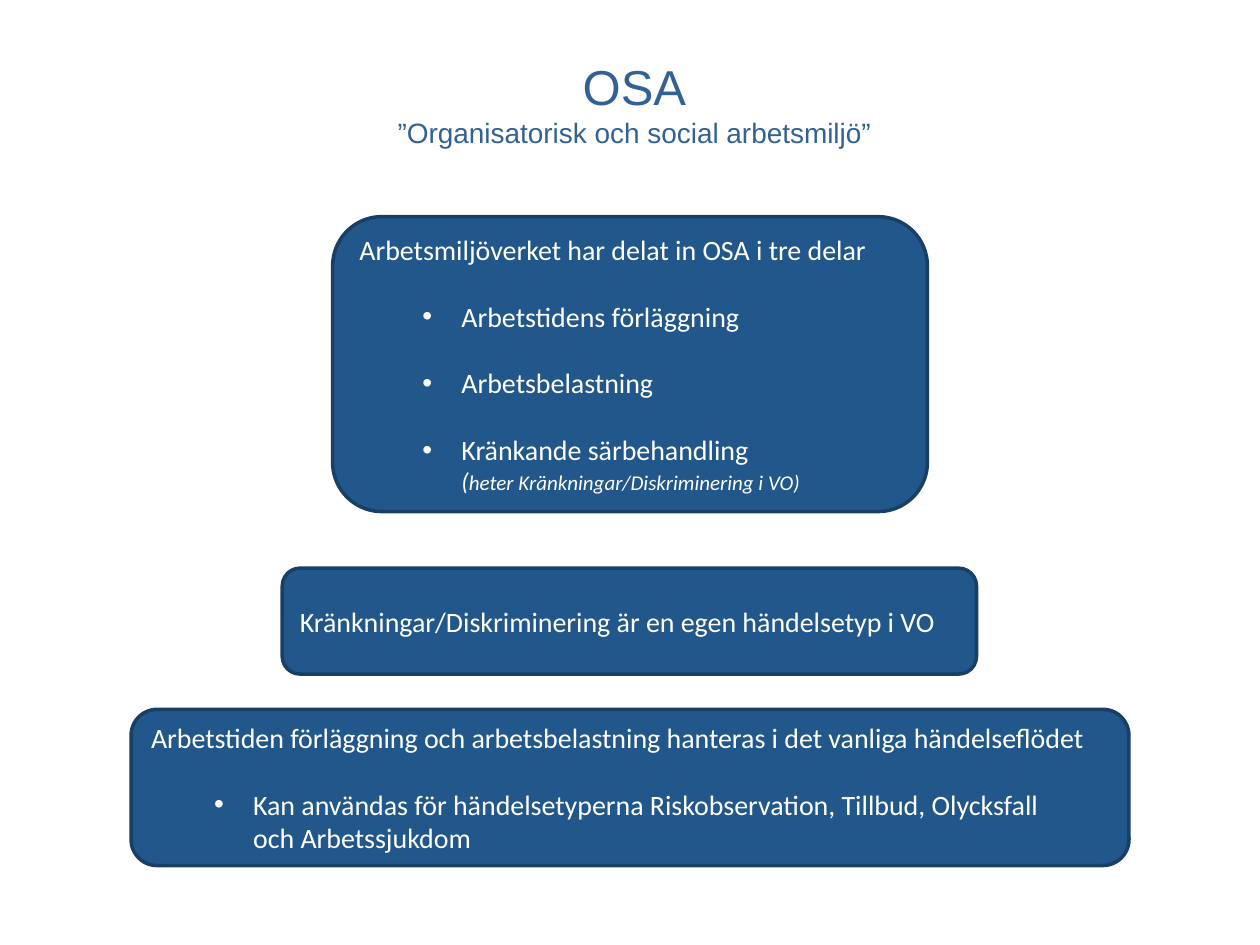
from lxml.etree import SubElement
from pptx import Presentation
from pptx.dml.color import RGBColor
from pptx.enum.shapes import MSO_SHAPE as SHAPE
from pptx.enum.text import MSO_ANCHOR as ANCHOR, PP_ALIGN as ALIGN
from pptx.oxml.ns import qn
from pptx.util import Inches, Pt

TITLE_BLUE = RGBColor(0x32, 0x62, 0x95)
FILL_BLUE = RGBColor(0x21, 0x57, 0x8A)
LINE_BLUE = RGBColor(0x18, 0x40, 0x66)
WHITE = RGBColor(0xFF, 0xFF, 0xFF)
GAP = 19


def add_run(p, text, size=16, font="Calibri", color=WHITE, italic=None):
    """Append a formatted run to a paragraph."""
    r = p.add_run()
    r.text = text
    r.font.size = Pt(size)
    r.font.name = font
    r.font.color.rgb = color
    r.font.italic = italic


def indent(p, left=0.81, bullet=False):
    """Indent a paragraph, with a hanging bullet if asked for."""
    p.level = 1
    pPr = p._p.get_or_add_pPr()
    pPr.set("marL", str(Inches(left)))
    pPr.set("indent", str(Inches(-0.31) if bullet else 0))
    if bullet:
        SubElement(pPr, qn("a:buFont"), typeface="Arial")
        SubElement(pPr, qn("a:buChar"), char="•")


def add_title(slide, box, heading, subheading):
    """Place the two-line title in its placeholder."""
    sp = slide.shapes.title
    sp.left, sp.top, sp.width, sp.height = map(Inches, box)
    tf = sp.text_frame
    tf.vertical_anchor = ANCHOR.MIDDLE
    p = tf.paragraphs[0]
    p.alignment = ALIGN.CENTER
    add_run(p, heading, size=28, font="Arial", color=TITLE_BLUE)
    p.add_line_break()
    add_run(p, subheading, size=16, font="Arial", color=TITLE_BLUE)


def add_panel(slide, box, lead, bullets=()):
    """Draw a rounded panel with a lead line and bullets, and return its text frame."""
    sp = slide.shapes.add_shape(SHAPE.ROUNDED_RECTANGLE, *map(Inches, box))
    sp.shadow.inherit = False
    sp.fill.solid()
    sp.fill.fore_color.rgb = FILL_BLUE
    sp.line.color.rgb = LINE_BLUE
    sp.line.width = Pt(2)
    tf = sp.text_frame
    tf.word_wrap = True
    tf.vertical_anchor = ANCHOR.MIDDLE
    tf.paragraphs[0].alignment = ALIGN.LEFT
    add_run(tf.paragraphs[0], lead)
    for lines in bullets:
        p = tf.add_paragraph()
        p.alignment = ALIGN.LEFT
        p.space_before = Pt(GAP)
        indent(p, bullet=True)
        for i, line in enumerate(lines.split("\n")):
            if i:
                p.add_line_break()
            add_run(p, line)
    return tf


def add_note(tf, text):
    """Add a small italic remark in parentheses under the last bullet."""
    p = tf.add_paragraph()
    p.alignment = ALIGN.LEFT
    indent(p)
    add_run(p, "(", size=14, italic=True)
    add_run(p, text + ")", size=12, italic=True)


def main():
    """Build the slide and save it."""
    prs = Presentation()
    prs.slide_width, prs.slide_height = Inches(10), Inches(7.5)
    slide = prs.slides.add_slide(prs.slide_layouts[5])
    add_title(slide, (1.61, 0.38, 6.85, 0.87), "OSA",
              "”Organisatorisk och social arbetsmiljö”")
    tf = add_panel(slide, (2.64, 1.72, 4.72, 2.34),
                   "Arbetsmiljöverket har delat in OSA i tre delar",
                   ["Arbetstidens förläggning", "Arbetsbelastning",
                    "Kränkande särbehandling"])
    add_note(tf, "heter Kränkningar/Diskriminering i VO")
    add_panel(slide, (2.24, 4.51, 5.51, 0.84),
              "Kränkningar/Diskriminering är en egen händelsetyp i VO")
    add_panel(slide, (1.04, 5.63, 7.92, 1.24),
              "Arbetstiden förläggning och arbetsbelastning hanteras i det vanliga händelseflödet",
              ["Kan användas för händelsetyperna Riskobservation, Tillbud, Olycksfall\n"
               "och Arbetssjukdom"])
    prs.save("out.pptx")


if __name__ == "__main__":
    main()
